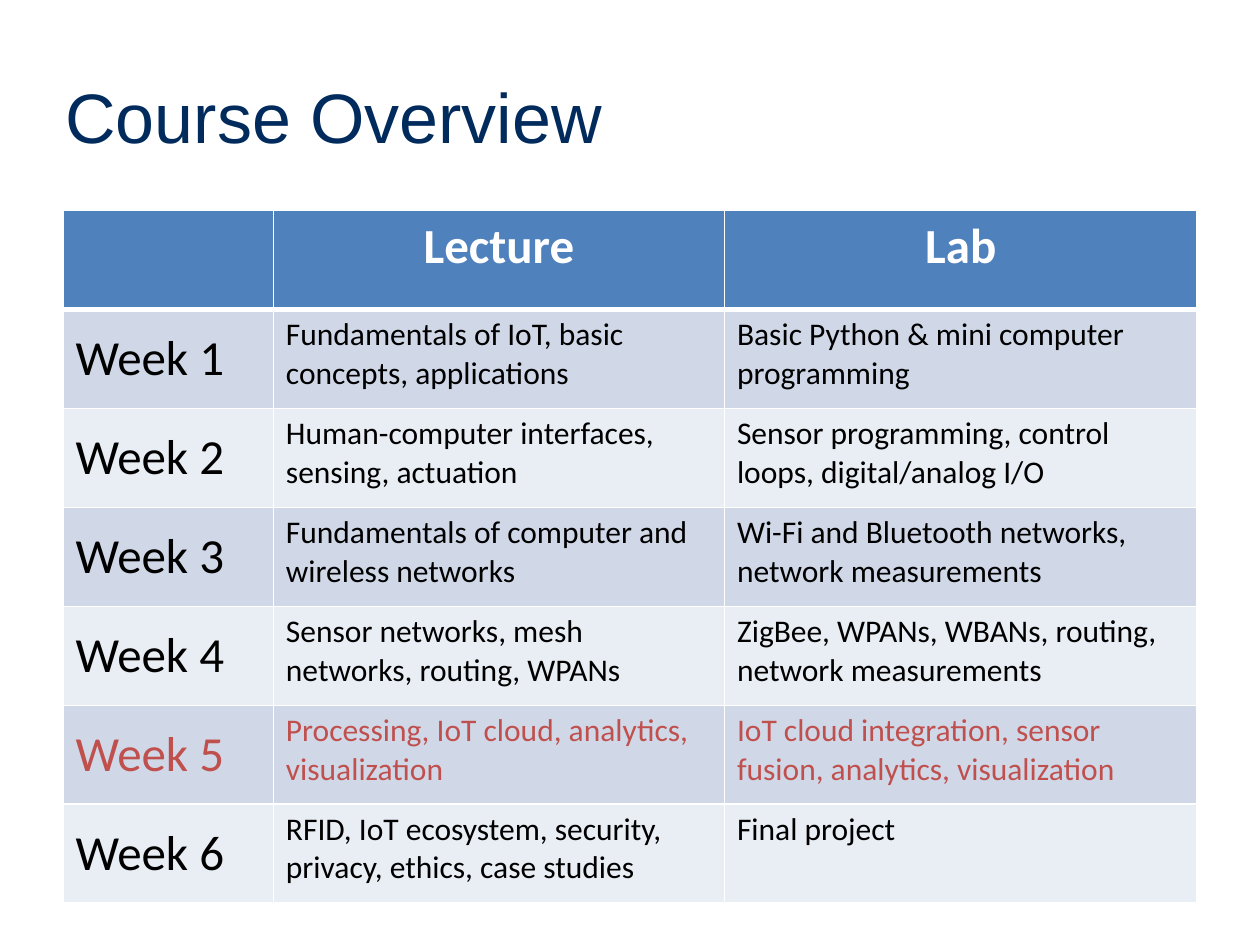
from lxml.etree import SubElement
from pptx import Presentation
from pptx.dml.color import RGBColor
from pptx.enum.text import MSO_ANCHOR, PP_ALIGN
from pptx.oxml.ns import qn
from pptx.util import Inches, Pt

NAVY = RGBColor(0x00, 0x2B, 0x5C)
BLUE = RGBColor(0x4F, 0x81, 0xBD)
BANDS = (RGBColor(0xD0, 0xD8, 0xE8), RGBColor(0xE9, 0xED, 0xF4))
WHITE = RGBColor(0xFF, 0xFF, 0xFF)
BLACK = RGBColor(0x00, 0x00, 0x00)
RED = RGBColor(0xC0, 0x50, 0x4D)

HEADERS = ("", "Lecture", "Lab")
WEEKS = (
    ("Fundamentals of IoT, basic concepts, applications",
     "Basic Python & mini computer programming"),
    ("Human-computer interfaces, sensing, actuation",
     "Sensor programming, control loops, digital/analog I/O"),
    ("Fundamentals of computer and wireless networks",
     "Wi-Fi and Bluetooth networks, network measurements"),
    ("Sensor networks, mesh networks, routing, WPANs",
     "ZigBee, WPANs, WBANs, routing, network measurements"),
    ("Processing, IoT cloud, analytics, visualization",
     "IoT cloud integration, sensor fusion, analytics, visualization"),
    ("RFID, IoT ecosystem, security, privacy, ethics, case studies",
     "Final project"),
)
CURRENT_WEEK = 5
COLUMN_WIDTHS = (1.67, 3.58, 3.75)
TABLE_HEIGHT = 5.5


def write_text(text_frame, text, *, size, color, font="Calibri", bold=False,
               align=PP_ALIGN.LEFT):
    paragraph = text_frame.paragraphs[0]
    paragraph.alignment = align
    run = paragraph.add_run()
    run.text = text
    run.font.name = font
    run.font.size = Pt(size)
    run.font.bold = bold
    run.font.color.rgb = color


def set_borders(cell, bottom=1, top=1):
    """Draw white cell borders; must run before the cell fill is set."""
    properties = cell._tc.get_or_add_tcPr()
    for side, width in (("L", 1), ("R", 1), ("T", top), ("B", bottom)):
        line = SubElement(properties, qn(f"a:ln{side}"), w=str(Pt(width)))
        fill = SubElement(line, qn("a:solidFill"))
        SubElement(fill, qn("a:srgbClr"), val=str(WHITE))


def format_cell(cell, fill, text="", anchor=MSO_ANCHOR.TOP, top=1, bottom=1,
                **text_format):
    set_borders(cell, bottom, top)
    cell.fill.solid()
    cell.fill.fore_color.rgb = fill
    cell.vertical_anchor = anchor
    if text:
        write_text(cell.text_frame, text, **text_format)


def add_title(slide, text):
    title = slide.shapes.title
    title.left, title.top = Inches(0.42), Inches(0.42)
    title.width, title.height = Inches(9.08), Inches(1)
    title.text_frame.vertical_anchor = MSO_ANCHOR.MIDDLE
    write_text(title.text_frame, text, size=40, color=NAVY, font="Arial")


def add_schedule(slide):
    row_count = len(WEEKS) + 1
    table = slide.shapes.add_table(
        row_count, len(HEADERS), Inches(0.5), Inches(1.67),
        Inches(sum(COLUMN_WIDTHS)), Inches(TABLE_HEIGHT)).table
    for column, width in zip(table.columns, COLUMN_WIDTHS):
        column.width = Inches(width)
    for row in table.rows:
        row.height = Inches(TABLE_HEIGHT / row_count)

    for column, header in enumerate(HEADERS):
        format_cell(table.cell(0, column), BLUE, header, bottom=3, size=28,
                    color=WHITE, bold=True, align=PP_ALIGN.CENTER)
    for week, topics in enumerate(WEEKS, start=1):
        band = BANDS[(week - 1) % 2]
        color = RED if week == CURRENT_WEEK else BLACK
        top = 3 if week == 1 else 1
        format_cell(table.cell(week, 0), band, f"Week {week}",
                    anchor=MSO_ANCHOR.MIDDLE, top=top, size=28, color=color)
        for column, topic in enumerate(topics, start=1):
            format_cell(table.cell(week, column), band, topic, top=top,
                        size=18, color=color)


def main():
    presentation = Presentation()
    presentation.slide_width = Inches(10)
    presentation.slide_height = Inches(7.5)
    slide = presentation.slides.add_slide(presentation.slide_layouts[5])
    add_title(slide, "Course Overview")
    add_schedule(slide)
    presentation.save("out.pptx")


if __name__ == "__main__":
    main()
